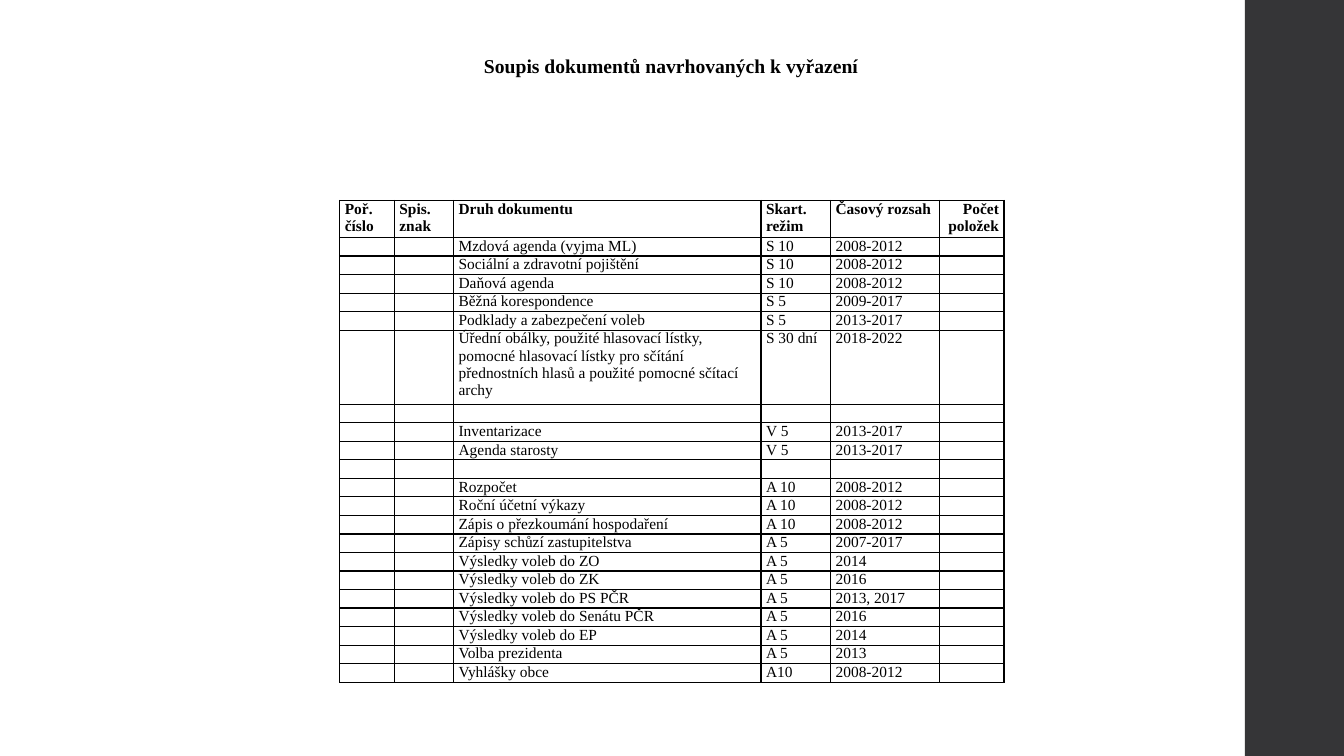
import pptx
import pptx.util
import pptx.dml.color
import pptx.enum.shapes
import pptx.enum.text
import pptx.oxml.ns
from lxml import etree

Pt = pptx.util.Pt
RGBColor = pptx.dml.color.RGBColor
ALIGN = pptx.enum.text.PP_ALIGN
qn = pptx.oxml.ns.qn

BLACK = RGBColor(0x00, 0x00, 0x00)
WHITE = RGBColor(0xFF, 0xFF, 0xFF)
CHARCOAL = RGBColor(0x35, 0x35, 0x37)
FONT = "Times New Roman"
LINE = 13.2

HEADER = ["Poř.\nčíslo", "Spis. znak", "Druh dokumentu", "Skart. režim",
          "Časový rozsah", "Počet\npoložek"]
DOCUMENTS = [
    ("Mzdová agenda (vyjma ML)", "S 10", "2008-2012"),
    ("Sociální a zdravotní pojištění", "S 10", "2008-2012"),
    ("Daňová agenda", "S 10", "2008-2012"),
    ("Běžná korespondence", "S 5", "2009-2017"),
    ("Podklady a zabezpečení voleb", "S 5", "2013-2017"),
    ("Úřední obálky, použité hlasovací lístky, pomocné hlasovací lístky pro sčítání "
     "přednostních hlasů a použité pomocné sčítací archy", "S 30 dní", "2018-2022"),
    ("", "", ""),
    ("Inventarizace", "V 5", "2013-2017"),
    ("Agenda starosty", "V 5", "2013-2017"),
    ("", "", ""),
    ("Rozpočet", "A 10", "2008-2012"),
    ("Roční účetní výkazy", "A 10", "2008-2012"),
    ("Zápis o přezkoumání hospodaření", "A 10", "2008-2012"),
    ("Zápisy schůzí zastupitelstva", "A 5", "2007-2017"),
    ("Výsledky voleb do ZO", "A 5", "2014"),
    ("Výsledky voleb do ZK", "A 5", "2016"),
    ("Výsledky voleb do PS PČR", "A 5", "2013, 2017"),
    ("Výsledky voleb do Senátu PČR", "A 5", "2016"),
    ("Výsledky voleb do EP", "A 5", "2014"),
    ("Volba prezidenta", "A 5", "2013"),
    ("Vyhlášky obce", "A10", "2008-2012"),
]
COL_WIDTHS = [39, 42.3, 219.6, 49.7, 77.8, 46.1]
LINES_PER_ROW = {0: 2, 6: 4}


def format_run(r, size, bold):
    r.font.name = FONT
    r.font.size = Pt(size)
    r.font.bold = bold
    r.font.color.rgb = BLACK


def add_borders(cell):
    tcPr = cell._tc.get_or_add_tcPr()
    for i, side in enumerate(("lnL", "lnR", "lnT", "lnB")):
        ln = etree.Element(qn("a:" + side), w=str(Pt(1)))
        fill = etree.SubElement(ln, qn("a:solidFill"))
        etree.SubElement(fill, qn("a:srgbClr"), val=str(BLACK))
        tcPr.insert(i, ln)


prs = pptx.Presentation()
prs.slide_width, prs.slide_height = Pt(960), Pt(540)
s = prs.slides.add_slide(prs.slide_layouts[6])

sidebar = s.shapes.add_shape(pptx.enum.shapes.MSO_SHAPE.RECTANGLE,
                             Pt(889.2), Pt(0), Pt(70.8), Pt(540))
sidebar.shadow.inherit = False
sidebar.fill.solid()
sidebar.fill.fore_color.rgb = CHARCOAL
sidebar.line.fill.background()

title = s.shapes.add_textbox(Pt(76.3), Pt(34.9), Pt(806.4), Pt(53.3))
tf = title.text_frame
tf.word_wrap = True
tf.text = "Soupis dokumentů navrhovaných k vyřazení"
p = tf.paragraphs[0]
p.alignment = ALIGN.CENTER
format_run(p.runs[0], 14, True)

rows = [HEADER] + [["", "", *document, ""] for document in DOCUMENTS]
heights = [LINE * LINES_PER_ROW.get(i, 1) for i in range(len(rows))]
table = s.shapes.add_table(len(rows), len(HEADER), Pt(242.7), Pt(143.2),
                           Pt(sum(COL_WIDTHS)), Pt(sum(heights))).table
table.horz_banding = False
for col, width in zip(table.columns, COL_WIDTHS):
    col.width = Pt(width)
for i, (texts, height) in enumerate(zip(rows, heights)):
    table.rows[i].height = Pt(height)
    for j, text in enumerate(texts):
        cell = table.cell(i, j)
        cell.margin_left = cell.margin_right = Pt(3.6)
        cell.margin_top = cell.margin_bottom = Pt(0)
        cell.fill.solid()
        cell.fill.fore_color.rgb = WHITE
        add_borders(cell)
        cell.text_frame.text = text
        for p in cell.text_frame.paragraphs:
            p.alignment = ALIGN.RIGHT if j == 5 else ALIGN.LEFT
            for r in p.runs:
                format_run(r, 11, i == 0)
            if not text:
                end = etree.SubElement(p._p, qn("a:endParaRPr"), sz="1100")
                etree.SubElement(end, qn("a:latin"), typeface=FONT)

prs.save("out.pptx")
